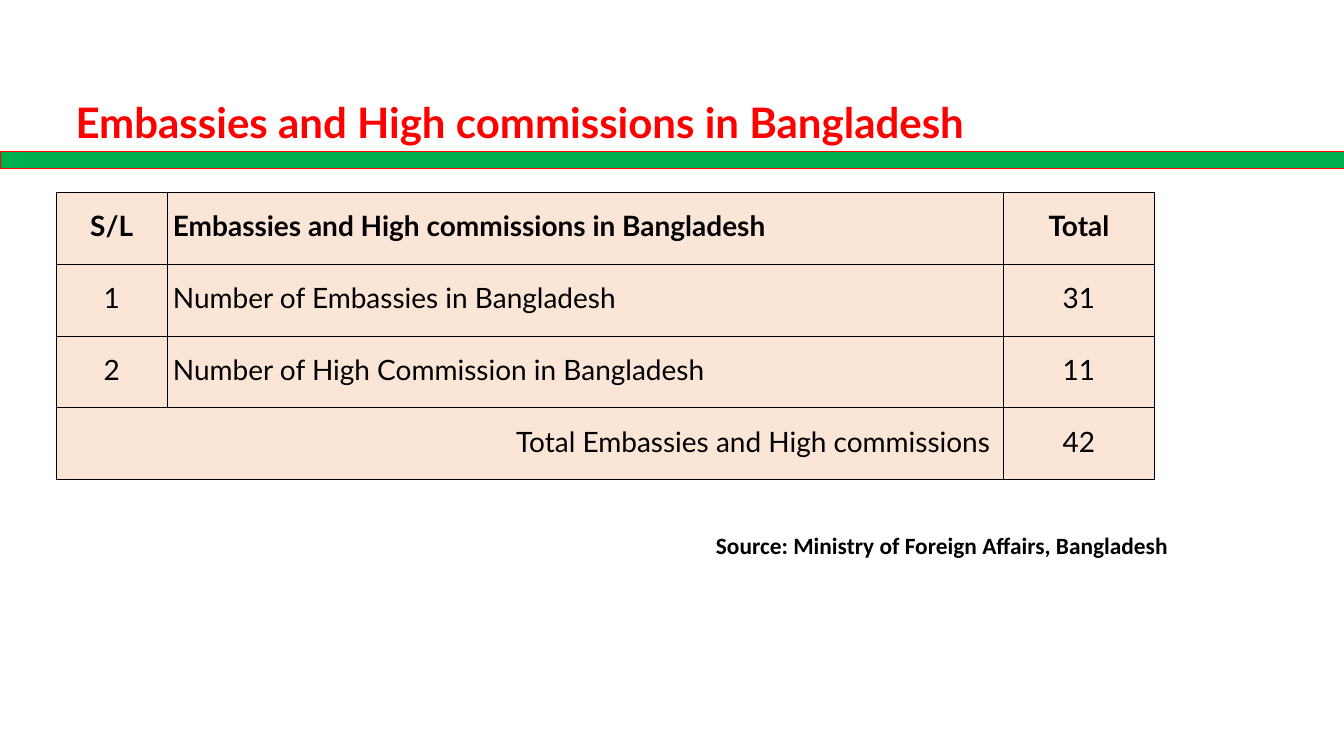
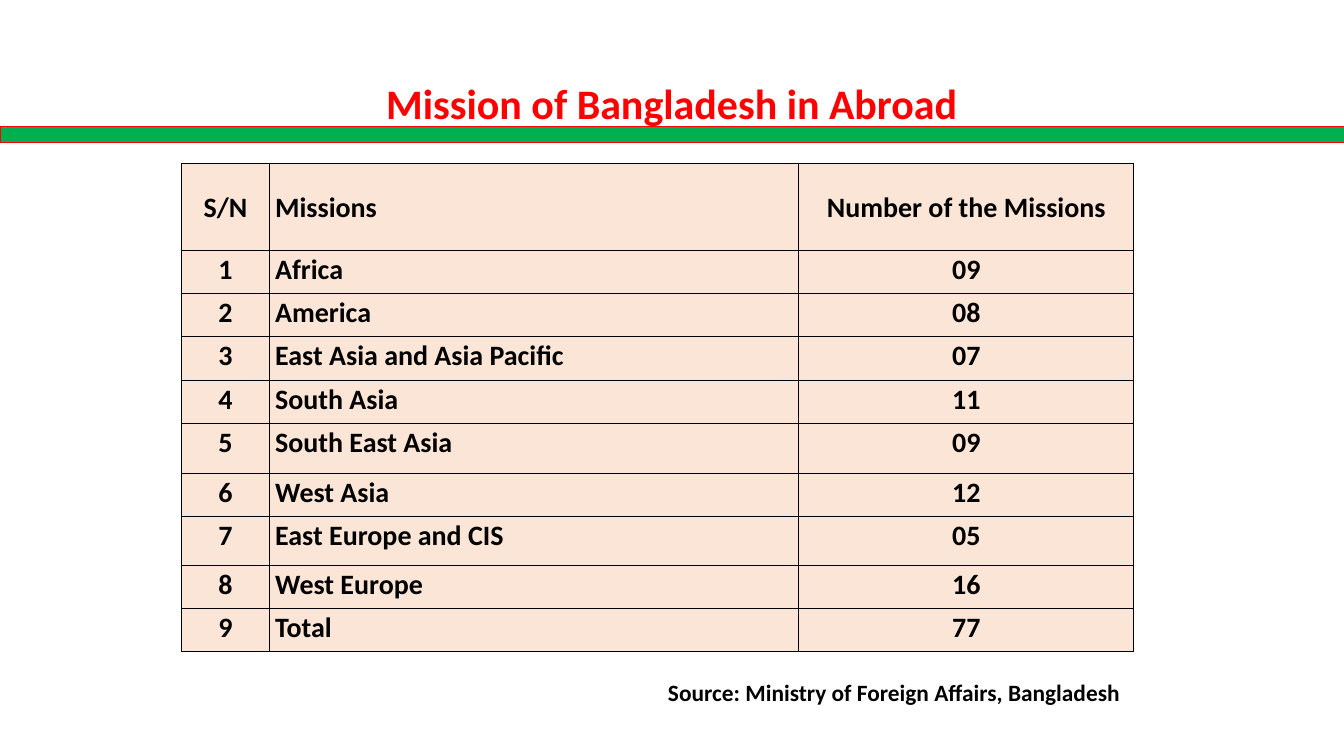
from lxml.etree import SubElement
from pptx import Presentation
from pptx.dml.color import RGBColor
from pptx.enum.shapes import MSO_SHAPE
from pptx.enum.text import MSO_ANCHOR, MSO_AUTO_SIZE, PP_ALIGN
from pptx.oxml.ns import qn
from pptx.util import Cm, Pt

LEFT, MID, RIGHT = PP_ALIGN.LEFT, PP_ALIGN.CENTER, PP_ALIGN.RIGHT


def paint(text):
    return RGBColor.from_string(text)


def adjust(item, form):
    for name, value in form.items():
        setattr(item, name, value)


class Deck:
    red, green, peach, black = "FF0000", "00B050", "FBE5D6", "000000"
    wide, high = 40.64, 22.86

    def __init__(self):
        self.file = Presentation()
        adjust(self.file, {"slide_width": Cm(self.wide), "slide_height": Cm(self.high)})

    def start(self):
        self.slide = self.file.slides.add_slide(self.file.slide_layouts[5])

    def label(self, frame, text, size, font, color=black, bold=True, align=LEFT, space=1.0):
        line = frame.paragraphs[0]
        adjust(line, {"alignment": align, "line_spacing": space})
        run = line.add_run()
        run.text = text
        adjust(run.font, {"size": Pt(size), "name": font, "bold": bold})
        run.font.color.rgb = paint(color)

    def title(self, text, base, font, align):
        box = self.slide.shapes.title
        top = 1.47
        adjust(box, {"left": Cm(2.03), "top": Cm(top),
                     "width": Cm(36.58), "height": Cm(base - top)})
        adjust(box.text_frame, {"vertical_anchor": MSO_ANCHOR.BOTTOM,
                                "auto_size": MSO_AUTO_SIZE.NONE, "word_wrap": True})
        self.label(box.text_frame, text, 36, font, self.red, align=align)

    def band(self, top):
        bar = self.slide.shapes.add_shape(
            MSO_SHAPE.FLOWCHART_PROCESS, 0, Cm(top), Cm(self.wide), Cm(0.51))
        bar.shadow.inherit = False
        bar.fill.solid()
        bar.fill.fore_color.rgb = paint(self.green)
        bar.line.color.rgb = paint(self.red)
        bar.line.width = Pt(0.75)

    def border(self, cell):
        props = cell._tc.get_or_add_tcPr()
        for side in "LRTB":
            line = SubElement(props, qn("a:ln" + side), w=str(Pt(1)))
            fill = SubElement(line, qn("a:solidFill"))
            SubElement(fill, qn("a:srgbClr"), val=self.black)

    def table(self, left, top, cols, highs, rows, font, space, head, bold):
        grid = self.slide.shapes.add_table(
            len(rows), len(cols), Cm(left), Cm(top), Cm(sum(cols)), Cm(sum(highs))).table
        adjust(grid, {"first_row": False, "horz_banding": False})
        for col, width in zip(grid.columns, cols):
            col.width = Cm(width)
        for r, (row, high) in enumerate(zip(rows, highs)):
            grid.rows[r].height = Cm(high)
            span = len(row) < len(cols)
            if span:
                grid.cell(r, 0).merge(grid.cell(r, 1))
                row = (row[0], None, row[1])
            for c, text in enumerate(row):
                cell = grid.cell(r, c)
                adjust(cell, {"margin_left": Cm(0.18), "margin_right": Cm(0.18),
                              "margin_top": 0, "margin_bottom": 0,
                              "vertical_anchor": MSO_ANCHOR.TOP if r else head})
                self.border(cell)
                cell.fill.solid()
                cell.fill.fore_color.rgb = paint(self.peach)
                if text:
                    align = RIGHT if span and c == 0 else (MID, LEFT, MID)[c]
                    self.label(cell.text_frame, text, 24, font,
                               bold=bold or r == 0, align=align, space=space)

    def source(self, left, top, width, text, space):
        box = self.slide.shapes.add_textbox(Cm(left), Cm(top), Cm(width), Cm(1.15))
        adjust(box.text_frame, {"word_wrap": True,
                                "auto_size": MSO_AUTO_SIZE.SHAPE_TO_FIT_TEXT})
        self.label(box.text_frame, text, 20, "Calibri", align=RIGHT, space=space)


def main():
    credit = "Source: Ministry of Foreign Affairs, Bangladesh"
    deck = Deck()

    topic = "Embassies and High commissions in Bangladesh"
    deck.start()
    deck.title(topic, 4.57, "Lato", LEFT)
    deck.table(1.7, 5.82, (3.35, 25.28, 4.59), [2.17] * 4, (
        ("S/L", topic, "Total"),
        ("1", "Number of Embassies in Bangladesh", "31"),
        ("2", "Number of High Commission in Bangladesh", "11"),
        ("Total Embassies and High commissions ", "42"),
    ), "Lato", 1.5, MSO_ANCHOR.TOP, False)
    deck.band(4.57)
    deck.source(1.7, 15.88, 33.87, credit, 1.07)

    areas = (("Africa", "09"), ("America", "08"), ("East Asia and Asia Pacific", "07"),
             ("South Asia", "11"), ("South East Asia", "09"), ("West Asia", "12"),
             ("East Europe and CIS", "05"), ("West Europe", "16"), ("Total", "77"))
    rows = [("S/N", "Missions", "Number of the Missions")]
    rows += [(str(n), *area) for n, area in enumerate(areas, 1)]
    deck.start()
    deck.title("Mission of Bangladesh in Abroad", 4.01, "Calibri", MID)
    deck.band(3.81)
    deck.table(5.5, 4.95, (2.64, 16.02, 10.12),
               (2.62, 1.3, 1.3, 1.34, 1.3, 1.5, 1.3, 1.5, 1.3, 1.3),
               rows, "Calibri", 1.07, MSO_ANCHOR.MIDDLE, True)
    deck.source(5.5, 20.37, 28.78, credit + " ", 1.0)

    deck.file.save("out.pptx")


if __name__ == "__main__":
    main()
